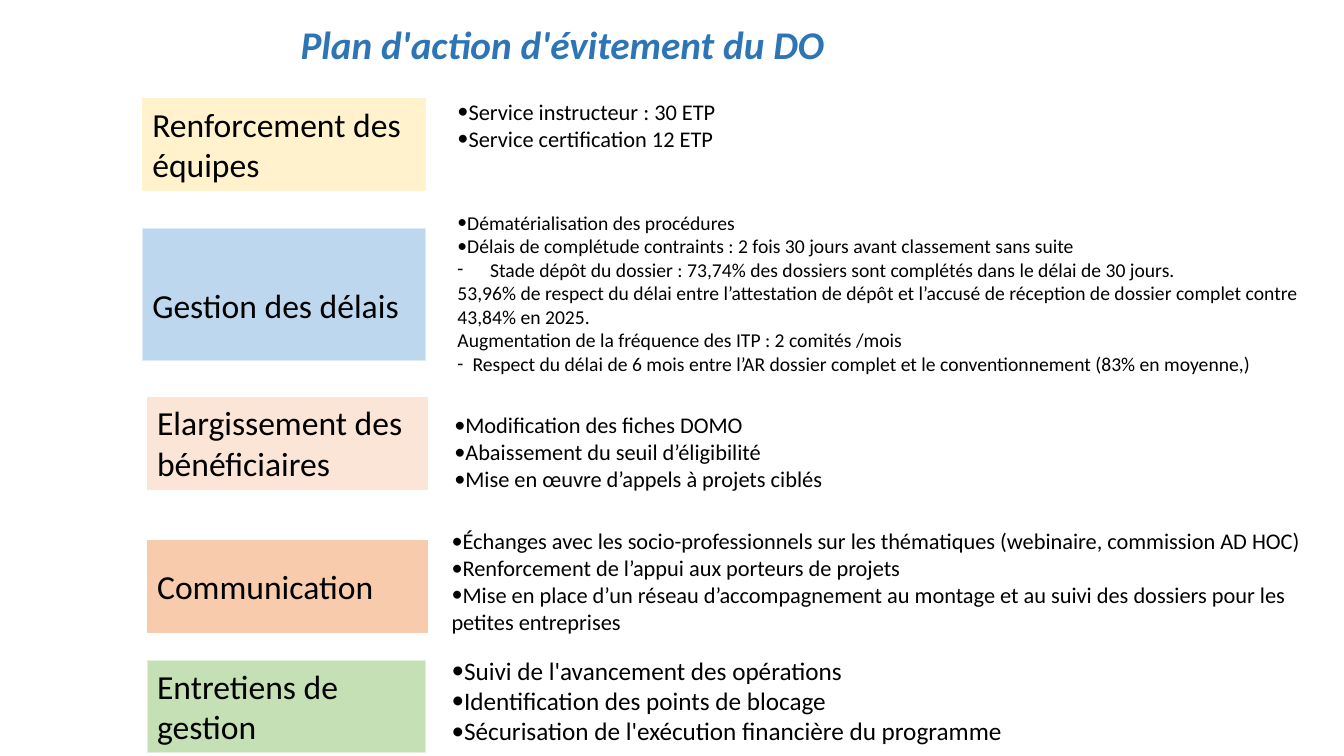
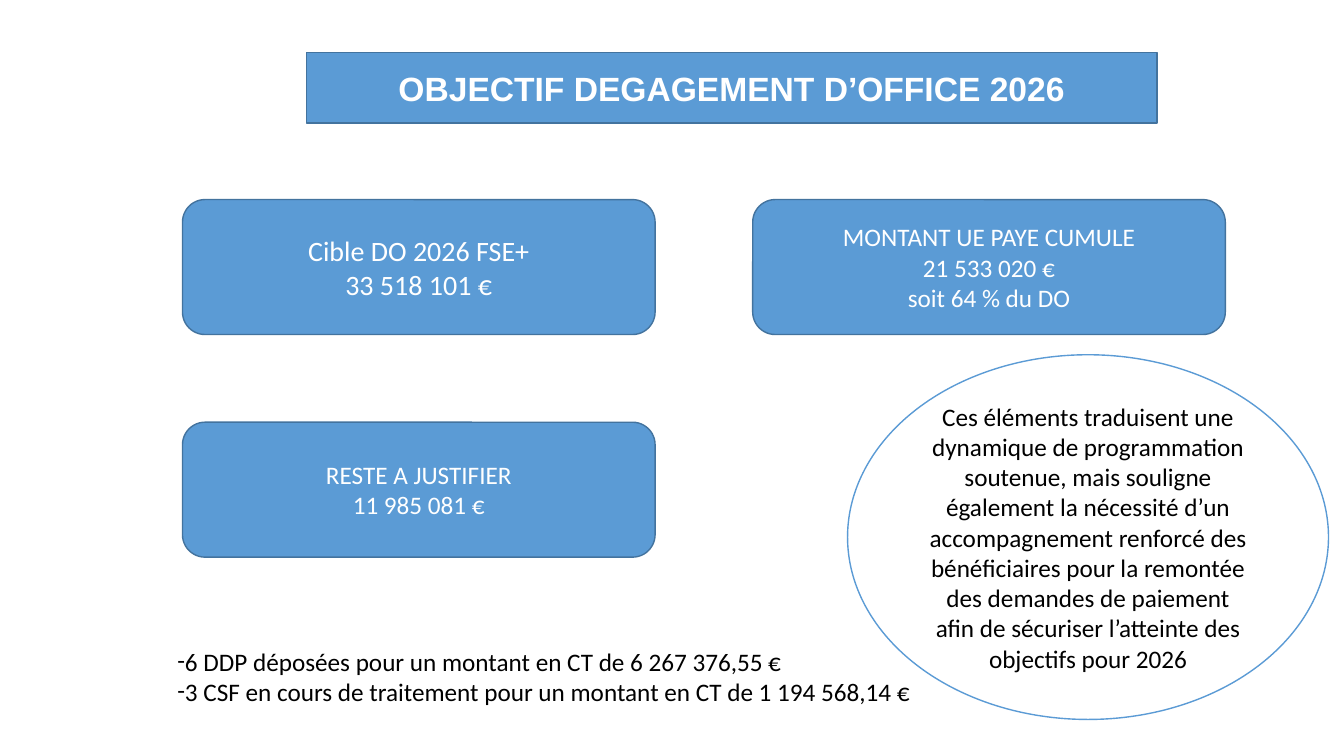
from lxml import etree
from pptx import Presentation
from pptx.dml.color import RGBColor
from pptx.enum.shapes import MSO_SHAPE
from pptx.enum.text import MSO_ANCHOR, MSO_AUTO_SIZE, PP_ALIGN
from pptx.oxml.ns import qn
from pptx.util import Cm, Pt

RECT, ROUND, OVAL = MSO_SHAPE.RECTANGLE, MSO_SHAPE.ROUNDED_RECTANGLE, MSO_SHAPE.OVAL
TOP, MIDDLE = MSO_ANCHOR.TOP, MSO_ANCHOR.MIDDLE
LEFT, CENTER = PP_ALIGN.LEFT, PP_ALIGN.CENTER
BLACK, WHITE, BLUE, EDGE, TITLE = "000000", "FFFFFF", "5B9BD5", "43739E", "2E75B6"
FONT = "Calibri"


def paint(shape, fill, line, width=1):
    shape.fill.solid()
    shape.fill.fore_color.rgb = RGBColor.from_string(fill)
    shape.line.color.rgb = RGBColor.from_string(line)
    shape.line.width = Pt(width)
    shape.shadow.inherit = False


def write(shape, lines, size, color=BLACK, align=LEFT, anchor=TOP,
          font=FONT, bold=False, italic=False):
    """Fill a shape with lines; a line is text or (bullet, indent in cm, text)."""
    frame = shape.text_frame
    frame.word_wrap = True
    frame.auto_size = MSO_AUTO_SIZE.NONE
    frame.vertical_anchor = anchor
    for i, line in enumerate(lines):
        para = frame.paragraphs[0] if i == 0 else frame.add_paragraph()
        para.alignment = align
        if isinstance(line, tuple):
            mark, indent, line = line
            props = para._p.get_or_add_pPr()
            props.set("marL", str(Cm(indent)))
            props.set("indent", str(-Cm(indent)))
            etree.SubElement(props, qn("a:buFont")).set("typeface", FONT)
            etree.SubElement(props, qn("a:buChar")).set("char", mark)
        run = para.add_run()
        run.text = line
        run.font.name = font
        run.font.size = Pt(size)
        run.font.bold = bold
        run.font.italic = italic
        run.font.color.rgb = RGBColor.from_string(color)


deck = Presentation()
deck.slide_width, deck.slide_height = Cm(33.87), Cm(19.05)
layout = deck.slide_layouts[5]

# Slide 1: action plan
slide = deck.slides.add_slide(layout)
title = slide.shapes.title
title.left, title.top, title.width, title.height = Cm(7.32), Cm(0.38), Cm(22.15), Cm(1.45)
write(title, ["Plan d'action d'évitement du DO"], 28, TITLE, bold=True, italic=True)

# label, place, fill, line, top inset
labels = [
    ("Renforcement des équipes", (3.59, 2.48, 7.14, 2.32), "FFF2CC", "FFF2CC", 0.13),
    ("Gestion des délais", (3.59, 5.75, 7.14, 3.33), "BDD7EE", "DEEBF7", 1.42),
    ("Elargissement des bénéficiaires", (3.71, 10.01, 7.06, 2.32), "FBE5D6", "FBE5D6", 0.13),
    ("Communication", (3.71, 13.61, 7.06, 2.32), "F8CBAD", "F8CBAD", 0.64),
    ("Entretiens de gestion", (3.71, 16.65, 7.01, 2.32), "C5E0B4", "E2F0D9", 0.13),
]
for text, place, fill, line, inset in labels:
    box = slide.shapes.add_shape(RECT, *map(Cm, place))
    paint(box, fill, line, 0.75)
    box.text_frame.margin_top = Cm(inset)
    write(box, [text], 24)

# place, text size, lines
details = [
    ((11.28, 2.34, 22.59, 1.63), 16, [
        ("•", 0, "Service instructeur : 30 ETP"),
        ("•", 0, "Service certification 12 ETP"),
    ]),
    ((11.28, 5.18, 22.48, 4.45), 14, [
        ("•", 0, "Dématérialisation des procédures"),
        ("•", 0, "Délais de complétude contraints : 2 fois 30 jours avant classement sans suite"),
        ("-", 0.82, "Stade dépôt du dossier : 73,74% des dossiers sont complétés "
                    "dans le délai de 30 jours."),
        "53,96% de respect du délai entre l’attestation de dépôt et l’accusé de réception "
        "de dossier complet contre 43,84% en 2025.",
        "Augmentation de la fréquence des ITP : 2 comités /mois",
        ("-", 0.38, "Respect du délai de 6 mois entre l’AR dossier complet et le "
                    "conventionnement (83% en moyenne,)"),
    ]),
    ((11.2, 10.24, 22.66, 2.32), 16, [
        ("•", 0, "Modification des fiches DOMO"),
        ("•", 0, "Abaissement du seuil d’éligibilité"),
        ("•", 0, "Mise en œuvre d’appels à projets ciblés"),
    ]),
    ((11.13, 13.16, 22.66, 3), 16, [
        ("•", 0, "Échanges avec les socio-professionnels sur les thématiques "
                 "(webinaire, commission AD HOC)"),
        ("•", 0, "Renforcement de l’appui aux porteurs de projets"),
        ("•", 0, "Mise en place d’un réseau d’accompagnement au montage et au suivi "
                 "des dossiers pour les petites entreprises"),
    ]),
    ((11.13, 16.38, 15.01, 2.57), 18, [
        ("•", 0, "Suivi de l'avancement des opérations"),
        ("•", 0, "Identification des points de blocage"),
        ("•", 0, "Sécurisation de l'exécution financière du programme"),
    ]),
]
for place, size, lines in details:
    write(slide.shapes.add_textbox(*map(Cm, place)), lines, size)

# Slide 2: target for 2026
slide = deck.slides.add_slide(layout)
title = slide.shapes.title
title.left, title.top, title.width, title.height = Cm(7.72), Cm(1.32), Cm(21.44), Cm(1.78)
shape = etree.SubElement(title._element.spPr, qn("a:prstGeom"))
shape.set("prst", "roundRect")
etree.SubElement(shape, qn("a:avLst"))
paint(title, BLUE, EDGE)
write(title, ["OBJECTIF DEGAGEMENT D’OFFICE 2026"], 24, WHITE, CENTER, MIDDLE, "Arial", True)

# left, top, text size, lines
cards = [
    (4.6, 5.03, 20, ["Cible DO 2026 FSE+", "33 518 101 €"]),
    (18.97, 5.03, 18, ["MONTANT UE PAYE CUMULE", "21 533 020 €", "soit 64 % du DO"]),
    (4.6, 10.64, 18, ["RESTE A JUSTIFIER", "11 985 081 €"]),
]
for left, top, size, lines in cards:
    card = slide.shapes.add_shape(ROUND, Cm(left), Cm(top), Cm(11.91), Cm(3.4))
    paint(card, BLUE, EDGE)
    write(card, lines, size, WHITE, CENTER, MIDDLE)

oval = slide.shapes.add_shape(OVAL, Cm(21.36), Cm(8.94), Cm(12.12), Cm(9.19))
paint(oval, WHITE, BLUE)
write(oval, [
    "Ces éléments traduisent une dynamique de programmation soutenue, mais souligne "
    "également la nécessité d’un accompagnement renforcé des bénéficiaires pour la "
    "remontée des demandes de paiement afin de sécuriser l’atteinte des objectifs pour 2026",
], 18, align=CENTER, anchor=MIDDLE)

note = slide.shapes.add_textbox(Cm(4.22), Cm(16.15), Cm(19.23), Cm(1.8))
write(note, [
    ("-", 0, "6 DDP déposées pour un montant en CT de 6 267 376,55 €"),
    ("-", 0, "3 CSF en cours de traitement pour un montant en CT de 1 194 568,14 €"),
], 18)

deck.save("out.pptx")
